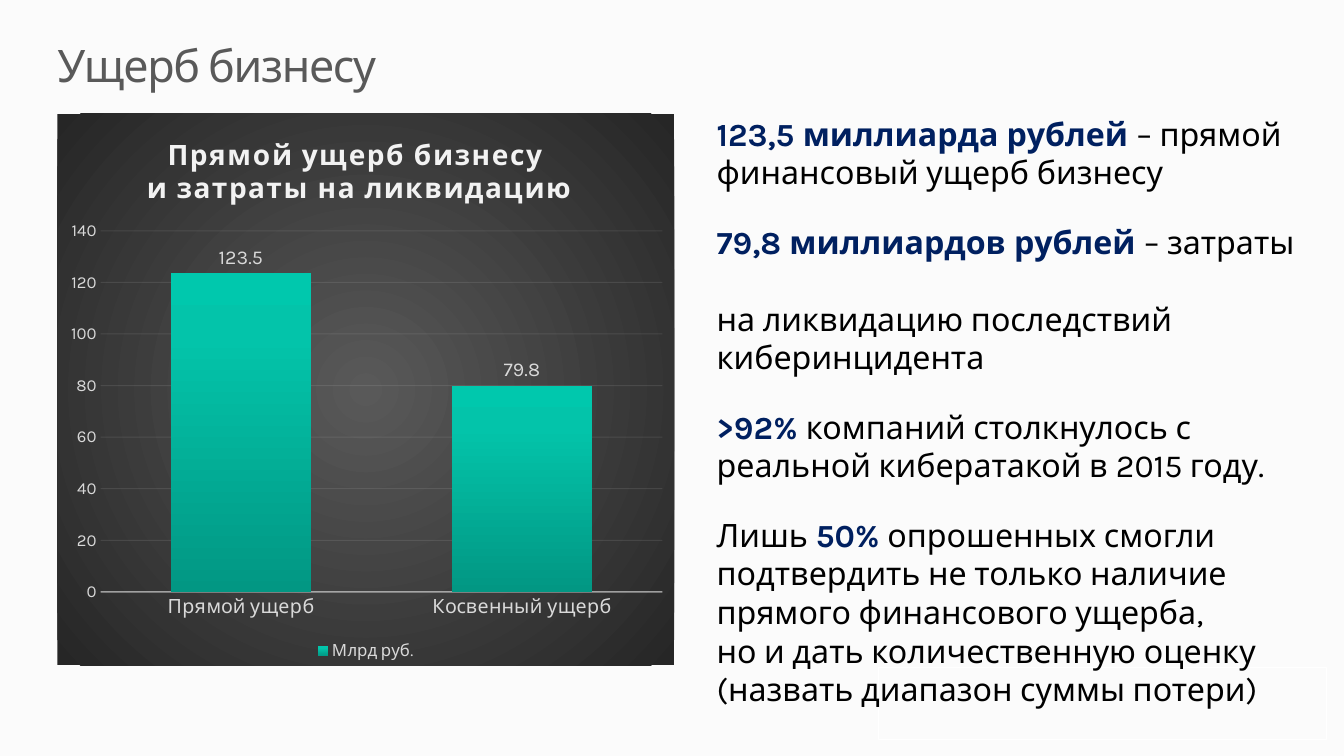
from lxml import etree
from pptx import Presentation
from pptx.chart.data import CategoryChartData
from pptx.dml.color import RGBColor
from pptx.enum import chart as charts, shapes, text
from pptx.oxml import parse_xml
from pptx.oxml.ns import nsdecls, qn
from pptx.util import Pt

FONT = "Karla"
BACKGROUND = RGBColor(0xFB, 0xFB, 0xFB)
WHITE = RGBColor(0xFF, 0xFF, 0xFF)
BLACK = RGBColor(0, 0, 0)
NAVY = RGBColor(0x00, 0x20, 0x60)
TITLE_GRAY = RGBColor(0x59, 0x59, 0x59)
LIGHT = RGBColor(0xF2, 0xF2, 0xF2)
LABEL_GRAY = RGBColor(0xD9, 0xD9, 0xD9)

TITLE = "Ущерб бизнесу"
# Each entry: space before, then (text, is highlighted) runs
FACTS = [
    (0, [("123,5 миллиарда рублей ", True), ("– прямой финансовый ущерб бизнесу", False)]),
    (22, [("79,8 миллиардов рублей ", True), ("– затраты", False)]),
    (27.5, [("на ликвидацию последствий киберинцидента", False)]),
    (22, [(">92%\u00a0", True), ("компаний столкнулось с реальной кибератакой в 2015 году.", False)]),
    (22, [("Лишь ", False), ("50%", True),
          ("\u00a0опрошенных смогли подтвердить не только наличие \vпрямого финансового ущерба, "
           "\vно и дать количественную оценку (назвать диапазон суммы потери)", False)]),
]
CHART_TITLE = ["Прямой ущерб бизнесу ", "и затраты на ликвидацию"]
SERIES = "Млрд руб."
DAMAGE = {"Прямой ущерб": 123.5, "Косвенный ущерб": 79.8}

LEFT, TOP = 41, 81.4
BAR_STOPS = [(0, "029783"), (80, "03C4AA"), (100, "00C8AD")]
PANEL_STOPS = [(0, "595959"), (100, "262626")]
LINEAR = '<a:lin ang="16200000" scaled="0"/>'
RADIAL = ('<a:path path="circle"><a:fillToRect l="50000" t="50000" r="50000" b="50000"/>'
          '</a:path>')


def set_font(font, size, color, bold=False):
    font.name, font.size, font.bold = FONT, Pt(size), bold
    font.color.rgb = color


def add_text(paragraph, content, size, color, bold=False, spacing=None):
    """Append content to the paragraph; a vertical tab becomes a line break."""
    for index, line in enumerate(content.split("\v")):
        if index:
            paragraph.add_line_break()
        run = paragraph.add_run()
        run.text = line
        set_font(run.font, size, color, bold)
        if spacing is not None:
            run.font._element.set("spc", str(spacing * 100))


def add_frame(slide, left, top, width, height):
    frame = slide.shapes.add_textbox(Pt(left), Pt(top), Pt(width), Pt(height)).text_frame
    frame.word_wrap = True
    frame.margin_left = frame.margin_right = frame.margin_top = frame.margin_bottom = 0
    return frame


def gradient_properties(stops, direction):
    """Shape properties for a chart part with a gradient fill and no outline."""
    marks = "".join(f'<a:gs pos="{place * 1000}"><a:srgbClr val="{color}"/></a:gs>'
                    for place, color in stops)
    return parse_xml(f'<c:spPr {nsdecls("c", "a")}><a:gradFill rotWithShape="1">'
                     f'<a:gsLst>{marks}</a:gsLst>{direction}</a:gradFill>'
                     '<a:ln><a:noFill/></a:ln></c:spPr>')


def style_line(line, width, opacity):
    line.width = Pt(width)
    line.color.rgb = LIGHT
    color = line._ln.find(".//" + qn("a:srgbClr"))
    etree.SubElement(color, qn("a:alpha")).set("val", str(opacity * 1000))


def layout(x, y, width=None, height=None):
    """Manual layout in fractions of the chart; a size fixes the inner plot."""
    values = {"xMode": "edge", "yMode": "edge", "x": x, "y": y}
    if width:
        values = {"layoutTarget": "inner", **values, "w": width, "h": height}
    parts = "".join(f'<c:{name} val="{value}"/>' for name, value in values.items())
    return parse_xml(f'<c:layout {nsdecls("c")}><c:manualLayout>{parts}'
                     '</c:manualLayout></c:layout>')


def add_damage_chart(slide):
    data = CategoryChartData()
    data.categories = list(DAMAGE)
    data.add_series(SERIES, list(DAMAGE.values()))
    chart = slide.shapes.add_chart(charts.XL_CHART_TYPE.COLUMN_CLUSTERED, Pt(LEFT), Pt(TOP),
                                   Pt(440.6), Pt(393.8), data).chart
    set_font(chart.font, 10, BLACK)
    chart._chartSpace.chart.addnext(gradient_properties(PANEL_STOPS, RADIAL))

    chart.has_title = True
    frame = chart.chart_title.text_frame
    for index, line in enumerate(CHART_TITLE):
        paragraph = frame.add_paragraph() if index else frame.paragraphs[0]
        add_text(paragraph, line, 20, LIGHT, bold=True, spacing=1)
    title = chart.chart_title._element
    for old in title.findall(qn("c:layout")):
        title.remove(old)
    title.find(qn("c:tx")).addnext(layout(0.14, 0.036))

    chart.has_legend = True
    chart.legend.position = charts.XL_LEGEND_POSITION.BOTTOM
    chart.legend.include_in_layout = False
    set_font(chart.legend.font, 12, LABEL_GRAY)

    plot = chart.plots[0]
    plot.gap_width, plot.overlap, plot.vary_by_categories = 100, -24, False
    bars = plot.series[0]
    old = bars._element.find(qn("c:spPr"))
    if old is not None:
        bars._element.remove(old)
    bars._element.find(qn("c:tx")).addnext(gradient_properties(BAR_STOPS, LINEAR))
    labels = bars.data_labels
    labels.show_value = True
    labels.position = charts.XL_LABEL_POSITION.OUTSIDE_END
    set_font(labels.font, 14, LABEL_GRAY)

    categories, values = chart.category_axis, chart.value_axis
    for axis, size in ((categories, 14), (values, 12)):
        axis.major_tick_mark = axis.minor_tick_mark = charts.XL_TICK_MARK.NONE
        set_font(axis.tick_labels.font, size, LABEL_GRAY)
    style_line(categories.format.line, 1, 54)
    values.minimum_scale, values.maximum_scale, values.major_unit = 0, 140, 20
    values.format.line.fill.background()
    style_line(values.major_gridlines.format.line, 0.75, 10)

    area = chart._chartSpace.chart.plotArea
    for old in area.findall(qn("c:layout")):
        area.remove(old)
    area.insert(0, layout(0.07, 0.212, 0.911, 0.655))


def main():
    presentation = Presentation()
    presentation.slide_width, presentation.slide_height = Pt(960), Pt(540)
    slide = presentation.slides.add_slide(presentation.slide_layouts[6])
    slide.background.fill.solid()
    slide.background.fill.fore_color.rgb = BACKGROUND

    panel = slide.shapes.add_shape(shapes.MSO_SHAPE.RECTANGLE,
                                   Pt(627.8), Pt(476.6), Pt(319.7), Pt(51.8))
    panel.shadow.inherit = False
    panel.fill.solid()
    panel.fill.fore_color.rgb = BACKGROUND
    panel.line.color.rgb = WHITE
    panel.line.width = Pt(0.75)

    heading = add_frame(slide, LEFT, 31, 877.7, 34.6)
    heading.vertical_anchor = text.MSO_ANCHOR.MIDDLE
    heading.paragraphs[0].line_spacing = 0.9
    add_text(heading.paragraphs[0], TITLE, 32, TITLE_GRAY, spacing=-1)

    facts = add_frame(slide, 511.9, TOP, 417.6, 399.6)
    for index, (gap, runs) in enumerate(FACTS):
        paragraph = facts.add_paragraph() if index else facts.paragraphs[0]
        if gap:
            paragraph.space_before = Pt(gap)
        for content, highlighted in runs:
            add_text(paragraph, content, 23, NAVY if highlighted else BLACK, bold=highlighted)

    add_damage_chart(slide)
    presentation.save("out.pptx")


if __name__ == "__main__":
    main()
